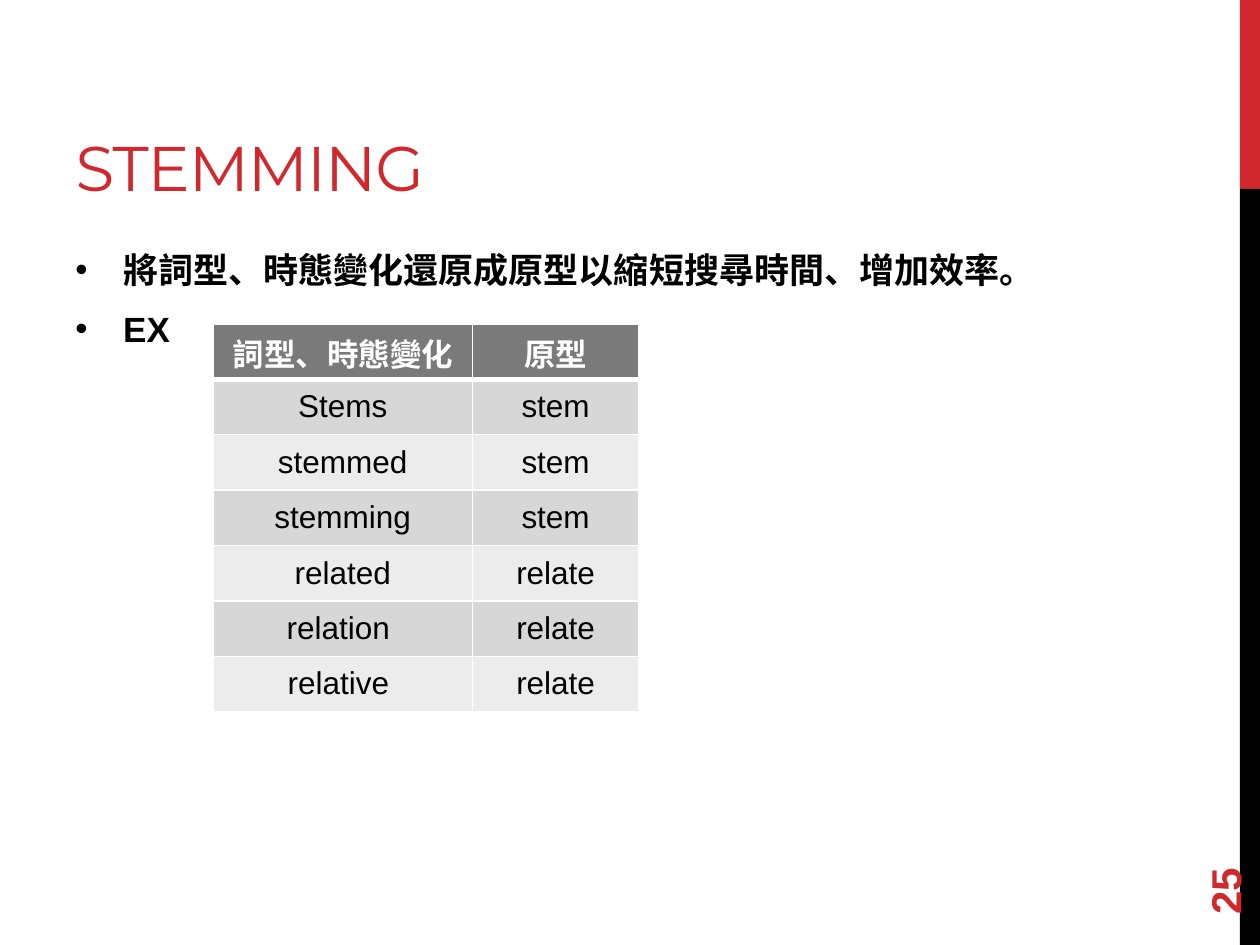
from dataclasses import dataclass

from lxml import etree
from pptx import Presentation
from pptx.dml.color import RGBColor
from pptx.enum import shapes, text
from pptx.oxml.ns import qn
from pptx import util as u

WIDTH, HEIGHT = u.Inches(10), u.Inches(7.5)
RED = RGBColor(0xD1, 0x28, 0x2E)
BLACK = RGBColor(0, 0, 0)
WHITE = RGBColor(0xFF, 0xFF, 0xFF)
HEADER_GRAY = RGBColor(0x7A, 0x7A, 0x7A)
BAND_GRAYS = (RGBColor(0xD7, 0xD7, 0xD7), RGBColor(0xEC, 0xEC, 0xEC))

BULLETS = ("將詞型、時態變化還原成原型以縮短搜尋時間、增加效率。", "EX")
WORD_ROWS = (
    ("詞型、時態變化", "原型"),
    ("Stems", "stem"),
    ("stemmed", "stem"),
    ("stemming", "stem"),
    ("related", "relate"),
    ("relation ", "relate"),
    ("relative ", "relate"),
)
COLUMN_WIDTHS = (2.06, 1.32)
ROW_HEIGHT = 0.44


@dataclass
class Box:
    """A rectangle in shares of the slide's width and height."""
    left: float
    top: float
    width: float
    height: float

    def lengths(self) -> tuple:
        return (u.Emu(int(self.left * WIDTH)), u.Emu(int(self.top * HEIGHT)),
                u.Emu(int(self.width * WIDTH)), u.Emu(int(self.height * HEIGHT)))


@dataclass
class Bar:
    box: Box
    color: RGBColor


SIDE_BARS = (Bar(Box(0.984, 0, 0.016, 0.2), RED),
             Bar(Box(0.984, 0.2, 0.016, 0.8), BLACK))
TITLE_BOX = Box(0.05, 0.17 / 7.5, 0.633, 0.2)
BODY_BOX = Box(0.05, 0.256, 0.833, 4.78 / 7.5)
NUMBER_BOX = Box(0.9, 6.44 / 7.5, 0.144, 0.4 / 7.5)


def apply(target, values: dict) -> None:
    for name, value in values.items():
        setattr(target, name, value)


def write(paragraph, words: str, size: int, color: RGBColor,
          bold: bool = False, name: str = "Arial"):
    run = paragraph.add_run()
    run.text = words
    apply(run.font, {"size": u.Pt(size), "bold": bold, "name": name})
    run.font.color.rgb = color
    return run


def draw_bar(slide, bar: Bar) -> None:
    shape = slide.shapes.add_shape(shapes.MSO_SHAPE.RECTANGLE, *bar.box.lengths())
    shape.shadow.inherit = False
    shape.fill.solid()
    shape.fill.fore_color.rgb = bar.color
    shape.line.fill.background()


def add_bullet(paragraph) -> None:
    properties = paragraph._p.get_or_add_pPr()
    indent = u.Inches(0.38)
    properties.set("marL", str(indent))
    properties.set("indent", str(-indent))
    etree.SubElement(properties, qn("a:buFont")).set("typeface", "Arial")
    etree.SubElement(properties, qn("a:buChar")).set("char", "•")


def set_borders(cell, bottom_width: float) -> None:
    properties = cell._tc.get_or_add_tcPr()
    sides = {"L": 1, "R": 1, "T": 1, "B": bottom_width}
    for position, (side, width) in enumerate(sides.items()):
        line = etree.Element(qn(f"a:ln{side}"), w=str(u.Pt(width)))
        fill = etree.SubElement(line, qn("a:solidFill"))
        etree.SubElement(fill, qn("a:srgbClr")).set("val", str(WHITE))
        properties.insert(position, line)


def draw_title(slide) -> None:
    title = slide.shapes.title
    apply(title, dict(zip(("left", "top", "width", "height"), TITLE_BOX.lengths())))
    apply(title.text_frame, {"vertical_anchor": text.MSO_ANCHOR.BOTTOM,
                             "auto_size": text.MSO_AUTO_SIZE.NONE,
                             "word_wrap": True})
    paragraph = title.text_frame.paragraphs[0]
    paragraph.alignment = text.PP_ALIGN.LEFT
    run = write(paragraph, "STEMMING", 36, RED, name="Montserrat")
    run.font._element.set("spc", "-60")


def draw_body(slide) -> None:
    frame = slide.shapes.add_textbox(*BODY_BOX.lengths()).text_frame
    frame.word_wrap = True
    for index, words in enumerate(BULLETS):
        paragraph = frame.add_paragraph() if index else frame.paragraphs[0]
        apply(paragraph, {"space_before": u.Pt(4), "space_after": u.Pt(6)})
        add_bullet(paragraph)
        write(paragraph, words, 20, BLACK, bold=True)


def draw_number(slide) -> None:
    shape = slide.shapes.add_textbox(*NUMBER_BOX.lengths())
    shape.rotation = 270
    apply(shape.text_frame, {"word_wrap": True,
                             "vertical_anchor": text.MSO_ANCHOR.MIDDLE})
    write(shape.text_frame.paragraphs[0], "25", 24, RED, bold=True)


def draw_table(slide) -> None:
    frame = slide.shapes.add_table(
        len(WORD_ROWS), len(COLUMN_WIDTHS), u.Inches(1.69), u.Inches(2.57),
        u.Inches(sum(COLUMN_WIDTHS)), u.Inches(ROW_HEIGHT * len(WORD_ROWS)))
    table = frame.table
    for column, width in zip(table.columns, COLUMN_WIDTHS):
        column.width = u.Inches(width)
    for row, words in enumerate(WORD_ROWS):
        table.rows[row].height = u.Inches(ROW_HEIGHT)
        header = row == 0
        for column, word in enumerate(words):
            cell = table.cell(row, column)
            cell.vertical_anchor = text.MSO_ANCHOR.MIDDLE
            cell.fill.solid()
            cell.fill.fore_color.rgb = HEADER_GRAY if header else BAND_GRAYS[(row - 1) % 2]
            set_borders(cell, 3 if header else 1)
            if row == 1:  # share the header's thick rule
                cell._tc.tcPr.find(qn("a:lnT")).set("w", str(u.Pt(3)))
            paragraph = cell.text_frame.paragraphs[0]
            paragraph.alignment = text.PP_ALIGN.CENTER
            write(paragraph, word, 18, WHITE if header else BLACK, bold=header)


def main() -> None:
    presentation = Presentation()
    apply(presentation, {"slide_width": WIDTH, "slide_height": HEIGHT})
    slide = presentation.slides.add_slide(presentation.slide_layouts[5])

    # Side decoration
    for bar in SIDE_BARS:
        draw_bar(slide, bar)

    # Text and table
    draw_title(slide)
    draw_body(slide)
    draw_number(slide)
    draw_table(slide)

    presentation.save("out.pptx")


if __name__ == "__main__":
    main()
